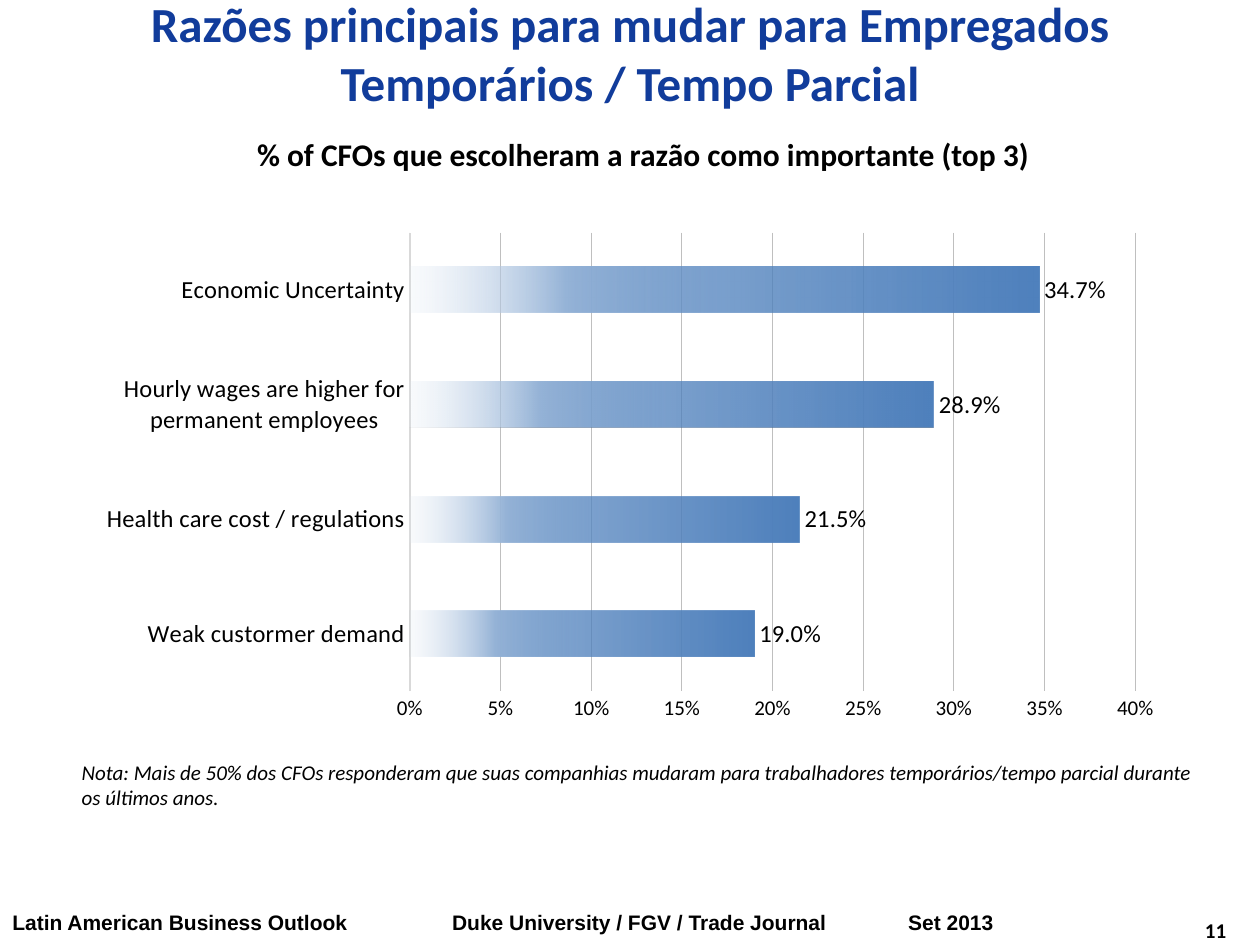
from lxml import etree
from pptx import Presentation
from pptx.chart.data import CategoryChartData
from pptx.dml.color import RGBColor
from pptx.enum.chart import XL_CHART_TYPE, XL_LABEL_POSITION, XL_TICK_MARK
from pptx.enum.text import MSO_ANCHOR, MSO_AUTO_SIZE, PP_ALIGN
from pptx.oxml import parse_xml
from pptx.oxml.ns import nsdecls, qn
from pptx.util import Inches, Pt

BAR = XL_CHART_TYPE.BAR_CLUSTERED
OUTSIDE_END = XL_LABEL_POSITION.OUTSIDE_END
NO_TICK = XL_TICK_MARK.NONE
TOP, MIDDLE = MSO_ANCHOR.TOP, MSO_ANCHOR.MIDDLE
LEFT, CENTER, RIGHT = PP_ALIGN.LEFT, PP_ALIGN.CENTER, PP_ALIGN.RIGHT
NO_AUTOFIT = MSO_AUTO_SIZE.NONE
TITLE_ONLY = 5

REASONS = {
    "Weak custormer demand": 0.19,
    "Health care cost / regulations": 0.215,
    "Hourly wages are higher for permanent employees": 0.289,
    "Economic Uncertainty": 0.347,
}
# Position %, colour, opacity %
BAR_STOPS = [(0, "4F81BD", 100), (51, "4F81BD", 75),
             (75, "95B3D7", 100), (100, "DCE6F2", 15)]
PLOT_AREA = {"x": 0.294, "y": 0.068, "w": 0.679, "h": 0.76}


def color(hex_value):
    return RGBColor.from_string(hex_value)


def format_font(font, size, name="Calibri", hex_color="000000", bold=False, italic=False):
    font.size = Pt(size)
    font.name = name
    font.bold = bold
    font.italic = italic
    font.color.rgb = color(hex_color)


def write_text(shape, text, align=LEFT, anchor=TOP, tabs=(), **font_format):
    frame = shape.text_frame
    frame.word_wrap = True
    frame.auto_size = NO_AUTOFIT
    frame.vertical_anchor = anchor
    paragraph = frame.paragraphs[0]
    paragraph.alignment = align
    if tabs:
        tab_list = etree.SubElement(paragraph._p.get_or_add_pPr(), qn("a:tabLst"))
        for position in tabs:
            etree.SubElement(tab_list, qn("a:tab"), pos=str(Inches(position)), algn="l")
    run = paragraph.add_run()
    run.text = text
    format_font(run.font, **font_format)


class SlideBuilder:
    def __init__(self, presentation):
        self.slide = presentation.slides.add_slide(presentation.slide_layouts[TITLE_ONLY])

    def title(self, text, left, top, width, height, **text_format):
        shape = self.slide.shapes.title
        shape.left, shape.top = Inches(left), Inches(top)
        shape.width, shape.height = Inches(width), Inches(height)
        write_text(shape, text, **text_format)

    def text(self, text, left, top, width, height, **text_format):
        shape = self.slide.shapes.add_textbox(
            Inches(left), Inches(top), Inches(width), Inches(height))
        write_text(shape, text, **text_format)

    def bar_chart(self, values, left, top, width, height):
        data = CategoryChartData(number_format="0.0%")
        data.categories = list(values)
        data.add_series("Series 1", list(values.values()))
        chart = self.slide.shapes.add_chart(
            BAR, Inches(left), Inches(top), Inches(width), Inches(height), data).chart
        chart.has_legend = False
        chart.has_title = False
        format_font(chart.font, 10)

        # Bars and their labels
        plot = chart.plots[0]
        plot.gap_width = 150
        plot.overlap = -58
        plot.vary_by_categories = False
        self.fade_bars(plot.series[0])
        labels = plot.series[0].data_labels
        labels.show_value = True
        labels.position = OUTSIDE_END
        labels.number_format = "0.0%"
        labels.number_format_is_linked = False
        format_font(labels.font, 14)

        # Axes
        for axis, size in ((chart.category_axis, 14), (chart.value_axis, 12)):
            axis.major_tick_mark = axis.minor_tick_mark = NO_TICK
            format_font(axis.tick_labels.font, size)
        category_line = chart.category_axis.format.line
        category_line.color.rgb = color("D9D9D9")
        category_line.width = Pt(1.5)
        value_axis = chart.value_axis
        value_axis.minimum_scale, value_axis.maximum_scale = 0, 0.4
        value_axis.major_unit = 0.05
        value_axis.tick_labels.number_format = "0%"
        value_axis.tick_labels.number_format_is_linked = False
        value_axis.format.line.fill.background()
        grid_line = value_axis.major_gridlines.format.line
        grid_line.color.rgb = color("BFBFBF")
        grid_line.width = Pt(0.75)
        self.place_plot(chart)

    def fade_bars(self, series):
        stops = "".join(
            f'<a:gs pos="{position * 1000}"><a:srgbClr val="{hex_color}">'
            f'<a:alpha val="{opacity * 1000}"/></a:srgbClr></a:gs>'
            for position, hex_color, opacity in BAR_STOPS)
        series.format.fill.solid()
        properties = series._element.get_or_add_spPr()
        properties.replace(properties.find(qn("a:solidFill")), parse_xml(
            f'<a:gradFill {nsdecls("a")}><a:gsLst>{stops}</a:gsLst>'
            '<a:lin ang="10800000" scaled="0"/></a:gradFill>'))

    def place_plot(self, chart):
        plot_area = chart._chartSpace.chart.plotArea
        for old_layout in plot_area.findall(qn("c:layout")):
            plot_area.remove(old_layout)
        modes = '<c:xMode val="edge"/><c:yMode val="edge"/>'
        sizes = "".join(f'<c:{key} val="{value}"/>' for key, value in PLOT_AREA.items())
        plot_area.insert(0, parse_xml(
            f'<c:layout {nsdecls("c")}><c:manualLayout><c:layoutTarget val="inner"/>'
            f'{modes}{sizes}</c:manualLayout></c:layout>'))


def main():
    presentation = Presentation()
    presentation.slide_width, presentation.slide_height = Inches(10), Inches(7.5)
    builder = SlideBuilder(presentation)

    # Heading
    builder.title("Razões principais para mudar para Empregados Temporários / Tempo Parcial",
                  0, 0, 10, 0.83, align=CENTER, anchor=MIDDLE,
                  size=28, hex_color="113C9B", bold=True)

    # Chart with its caption and note
    builder.bar_chart(REASONS, 0.76, 1.52, 8.48, 4.79)
    builder.text("% of CFOs que escolheram a razão como importante (top 3)",
                 1.18, 1.02, 7.85, 0.4, align=CENTER, size=18, bold=True)
    builder.text("Nota: Mais de 50% dos CFOs responderam que suas companhias mudaram para "
                 "trabalhadores temporários/tempo parcial durante os últimos anos.",
                 0.55, 5.98, 9.05, 0.5, size=12, italic=True)

    # Footer
    builder.text("Latin American Business Outlook\tDuke University / FGV / Trade Journal\tSet 2013",
                 0, 7.17, 8.67, 0.4, tabs=(3.49, 7.11), size=12, name="Arial", bold=True)
    builder.text("11", 9.08, 7.18, 0.75, 0.4, align=RIGHT, anchor=MIDDLE, size=12, bold=True)

    presentation.save("out.pptx")


if __name__ == "__main__":
    main()
